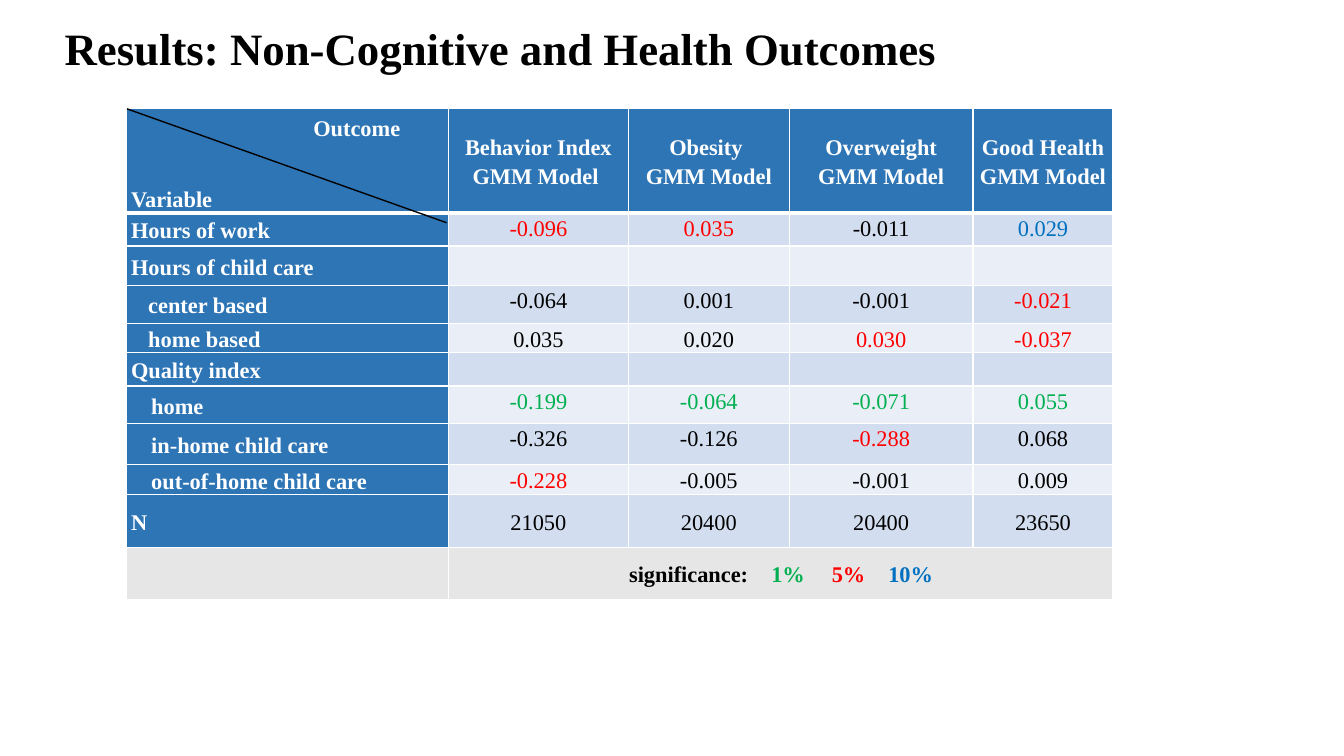
from lxml import etree
from pptx import Presentation
from pptx.dml.color import RGBColor
from pptx.enum.shapes import MSO_CONNECTOR as CONN
from pptx.enum.text import MSO_ANCHOR as ANCHOR, PP_ALIGN as ALIGN
from pptx.oxml.ns import qn
from pptx.util import Inches, Pt

WHITE = RGBColor(0xFF, 0xFF, 0xFF)
BLACK = RGBColor(0x00, 0x00, 0x00)
HEADER = RGBColor(0x2E, 0x75, 0xB6)
BAND_DARK = RGBColor(0xD2, 0xDE, 0xEF)
BAND_LIGHT = RGBColor(0xEA, 0xEF, 0xF7)
FOOTER = RGBColor(0xE7, 0xE6, 0xE6)
GREEN = RGBColor(0x00, 0xB0, 0x50)
RED = RGBColor(0xFF, 0x00, 0x00)
BLUE = RGBColor(0x00, 0x70, 0xC0)

# Letter after a value gives its significance colour
SIGNIFICANCE = {"g": GREEN, "r": RED, "b": BLUE}

COL_WIDTHS = [3.2, 1.78, 1.6, 1.82, 1.39]
ROW_HEIGHTS = [1.03, 0.33, 0.39, 0.38, 0.29, 0.33, 0.37, 0.41, 0.3, 0.52, 0.52]
OUTCOMES = ["Behavior Index", "Obesity ", "Overweight", "Good Health"]
# Variable, left indent, values
RESULTS = [
    ("Hours of work", 0, ["-0.096r", "0.035r", "-0.011", "0.029b"]),
    ("Hours of child care", 0, []),
    ("center based", 0.17, ["-0.064", "0.001", "-0.001", "-0.021r"]),
    ("home based", 0.17, ["0.035", "0.020", "0.030r", "-0.037r"]),
    ("Quality index", 0, []),
    ("home", 0.2, ["-0.199g", "-0.064g", "-0.071g", "0.055g"]),
    ("in-home child care", 0.2, ["-0.326", "-0.126", "-0.288r", "0.068"]),
    ("out-of-home child care", 0.2, ["-0.228r", "-0.005", "-0.001", "0.009"]),
    ("N", 0, ["21050", "20400", "20400", "23650"]),
]


class SlideBuilder:
    font = "Times New Roman"
    size = 16

    def __init__(self, prs):
        self.s = prs.slides.add_slide(prs.slide_layouts[5])

    def run(self, p, text, color, bold=True, size=None):
        r = p.add_run()
        r.text = text
        r.font.name, r.font.size = self.font, Pt(size or self.size)
        r.font.bold, r.font.color.rgb = bold, color

    def title(self, text, x, y, w, h):
        sp = self.s.shapes.title
        sp.left, sp.top, sp.width, sp.height = map(Inches, (x, y, w, h))
        tf = sp.text_frame
        tf.vertical_anchor = ANCHOR.MIDDLE
        p = tf.paragraphs[0]
        p.alignment, p.line_spacing = ALIGN.LEFT, 0.9
        self.run(p, text, BLACK, size=32)

    def table(self, x, y, widths, heights):
        frame = self.s.shapes.add_table(
            len(heights), len(widths), Inches(x), Inches(y),
            Inches(sum(widths)), Inches(sum(heights)))
        tbl = frame.table
        for col, w in zip(tbl.columns, widths):
            col.width = Inches(w)
        for row, h in zip(tbl.rows, heights):
            row.height = Inches(h)
        return tbl

    def cell(self, cell, fill, lines=(), color=WHITE, bold=True, align=ALIGN.LEFT,
             anchor=ANCHOR.MIDDLE, spacing=1.15, indent=0, bottom=1):
        cell.margin_left = cell.margin_right = Inches(0.05)
        cell.margin_top = cell.margin_bottom = 0
        cell.vertical_anchor = anchor
        cell.fill.solid()
        cell.fill.fore_color.rgb = fill
        self.borders(cell, bottom)
        tf = cell.text_frame
        for i, text in enumerate(lines):
            p = tf.add_paragraph() if i else tf.paragraphs[0]
            p.alignment, p.line_spacing = align, spacing
            if indent:
                p._p.get_or_add_pPr().set("marL", str(Inches(indent)))
            self.run(p, text, color, bold)

    def borders(self, cell, bottom):
        tc_pr = cell._tc.get_or_add_tcPr()
        sides = {"a:lnL": 1, "a:lnR": 1, "a:lnT": 1, "a:lnB": bottom}
        for i, (tag, width) in enumerate(sides.items()):
            ln = etree.Element(qn(tag), w=str(Pt(width)))
            fill = etree.SubElement(ln, qn("a:solidFill"))
            etree.SubElement(fill, qn("a:srgbClr"), val=str(WHITE))
            tc_pr.insert(i, ln)

    def tabbed(self, cell, left, tabs, parts):
        cell.margin_left = Inches(left)
        p = cell.text_frame.paragraphs[0]
        p.alignment, p.line_spacing = ALIGN.LEFT, 1.15
        tab_list = etree.SubElement(p._p.get_or_add_pPr(), qn("a:tabLst"))
        for pos in tabs:
            etree.SubElement(tab_list, qn("a:tab"), pos=str(Inches(pos)), algn="l")
        for text, color in parts:
            self.run(p, text, color)

    def line(self, x1, y1, x2, y2):
        c = self.s.shapes.add_connector(CONN.STRAIGHT, *map(Inches, (x1, y1, x2, y2)))
        c.line.color.rgb, c.line.width = BLACK, Pt(1)
        etree.SubElement(c._element.spPr, qn("a:effectLst"))

    def text(self, text, x, y, w, h):
        tf = self.s.shapes.add_textbox(*map(Inches, (x, y, w, h))).text_frame
        tf.word_wrap = True
        self.run(tf.paragraphs[0], text, WHITE)


def main():
    prs = Presentation()
    prs.slide_width, prs.slide_height = Inches(13.33), Inches(7.5)
    b = SlideBuilder(prs)
    b.title("Results: Non-Cognitive and Health Outcomes", 0.54, 0.15, 11.5, 0.71)

    # Table header
    tbl = b.table(1.25, 1.08, COL_WIDTHS, ROW_HEIGHTS)
    b.cell(tbl.cell(0, 0), HEADER, ["Variable"], anchor=ANCHOR.BOTTOM,
           spacing=1.07, bottom=3)
    for c, outcome in enumerate(OUTCOMES, 1):
        model = "GMM Model " if c == 1 else "GMM Model"
        b.cell(tbl.cell(0, c), HEADER, [outcome, model], align=ALIGN.CENTER, bottom=3)

    # Result rows
    for r, (variable, indent, values) in enumerate(RESULTS, 1):
        b.cell(tbl.cell(r, 0), HEADER, [variable], indent=indent)
        band = BAND_DARK if r % 2 else BAND_LIGHT
        anchor = ANCHOR.MIDDLE if variable == "N" else ANCHOR.TOP
        for c in range(1, len(COL_WIDTHS)):
            value = values[c - 1] if values else ""
            b.cell(tbl.cell(r, c), band, [value.rstrip("grb")] if value else [],
                   SIGNIFICANCE.get(value[-1:], BLACK), False, ALIGN.CENTER, anchor)

    # Significance key
    last = len(ROW_HEIGHTS) - 1
    for c in range(len(COL_WIDTHS)):
        b.cell(tbl.cell(last, c), FOOTER)
    key = tbl.cell(last, 1)
    key.merge(tbl.cell(last, len(COL_WIDTHS) - 1))
    b.tabbed(key, 1.79, [1.41, 2.01, 2.57],
             [("significance:", BLACK), ("\t1%", GREEN), ("\t5%", RED), ("\t10%", BLUE)])

    # Split corner cell
    b.line(1.26, 1.08, 4.43, 2.21)
    b.text("Outcome", 3.01, 1.08, 1.51, 0.37)

    prs.save("out.pptx")


if __name__ == "__main__":
    main()
